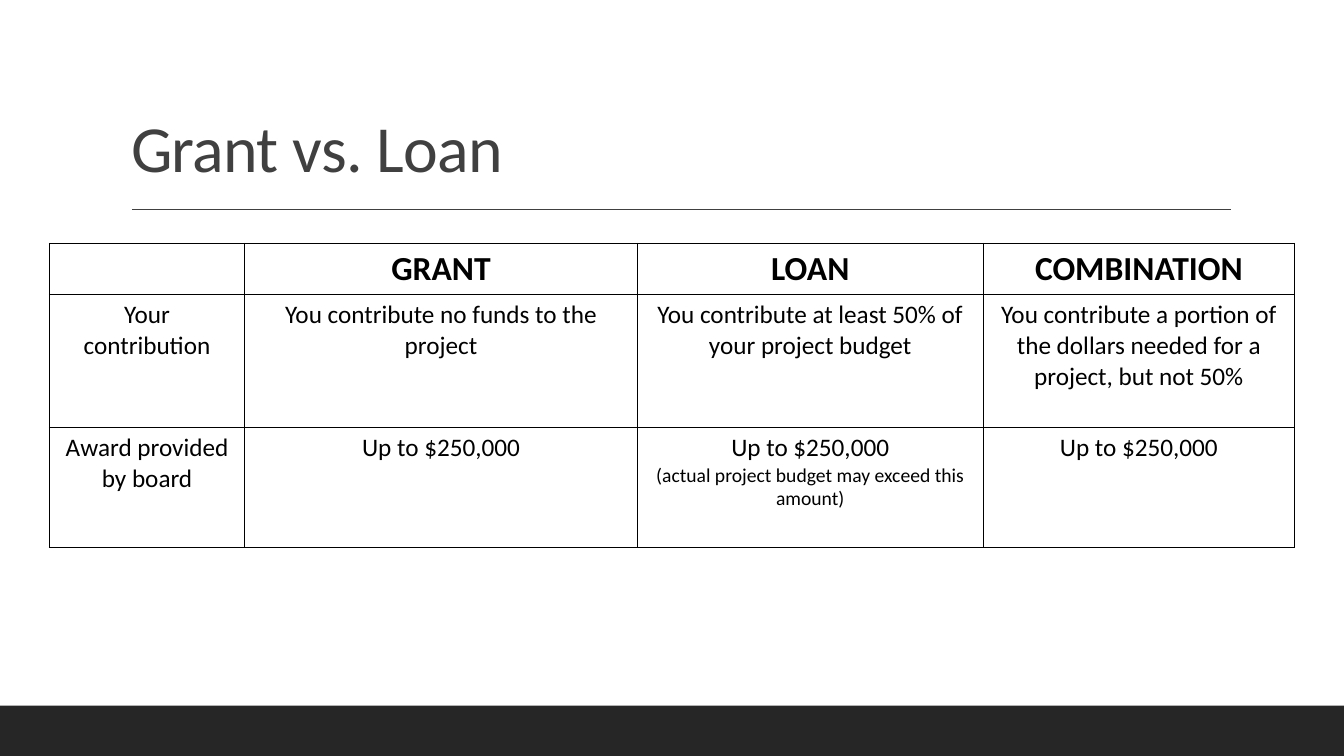
"""Build the Grant vs. Loan comparison slide."""
from lxml import etree
from pptx import Presentation
from pptx.dml import color
from pptx.enum import shapes, text
from pptx.oxml import ns
from pptx.util import Pt


def paint(form, shade):
    form.solid()
    form.fore_color.rgb = color.RGBColor.from_string(shade)


def write(para, words, size, shade, bold=False):
    run = para.add_run()
    run.text = words
    run.font.name = "Calibri"
    run.font.size = Pt(size)
    run.font.bold = bold
    paint(run.font.fill, shade)
    return run


deck = Presentation()
deck.slide_width, deck.slide_height = Pt(960), Pt(540)
slide = deck.slides.add_slide(deck.slide_layouts[5])

band = slide.shapes.add_shape(shapes.MSO_SHAPE.RECTANGLE, 0, Pt(504), Pt(960), Pt(36))
band.shadow.inherit = False
paint(band.fill, "262626")
band.line.fill.background()

rule = slide.shapes.add_connector(
    shapes.MSO_CONNECTOR.STRAIGHT, Pt(94.3), Pt(149.5), Pt(879), Pt(149.5))
paint(rule.line.fill, "404040")
rule.line.width = Pt(1)
etree.SubElement(rule._element.spPr, ns.qn("a:effectLst"))

title = slide.shapes.title
title.left, title.top, title.width, title.height = Pt(86.5), Pt(22.5), Pt(792), Pt(114.5)
frame = title.text_frame
frame.word_wrap = True
frame.auto_size = text.MSO_AUTO_SIZE.NONE
frame.vertical_anchor = text.MSO_ANCHOR.BOTTOM
head = frame.paragraphs[0]
head.alignment = text.PP_ALIGN.LEFT
head.line_spacing = 0.9
run = write(head, "Grant vs. Loan", 47, "404040")
run.font._element.set("spc", "-50")

award = "Up to $250,000"
rows = [
    ["", "GRANT", "LOAN", "COMBINATION"],
    ["Your contribution",
     "You contribute no funds to the project",
     "You contribute at least 50% of your project budget",
     "You contribute a portion of the dollars needed for a project, but not 50%"],
    ["Award provided by board", award, award, award],
]
wides = [139.5, 280.5, 247, 222.5]
highs = [36.5, 95, 85.5]
grid = slide.shapes.add_table(
    3, 4, Pt(35.3), Pt(174), Pt(sum(wides)), Pt(sum(highs))).table
for col, wide in zip(grid.columns, wides):
    col.width = Pt(wide)
for row, high in zip(grid.rows, highs):
    row.height = Pt(high)

for r, row in enumerate(rows):
    for c, words in enumerate(row):
        cell = grid.cell(r, c)
        props = cell._tc.get_or_add_tcPr()
        for side in ("lnL", "lnR", "lnT", "lnB"):
            edge = etree.SubElement(props, ns.qn("a:" + side), w=str(Pt(1)))
            fill = etree.SubElement(edge, ns.qn("a:solidFill"))
            etree.SubElement(fill, ns.qn("a:srgbClr"), val="000000")
        cell.fill.background()
        para = cell.text_frame.paragraphs[0]
        para.alignment = text.PP_ALIGN.CENTER
        if words:
            write(para, words, 18 if r else 24, "000000", r == 0)

note = grid.cell(2, 2).text_frame.add_paragraph()
note.alignment = text.PP_ALIGN.CENTER
write(note, "(actual project budget may exceed this amount)", 14, "000000")

deck.save("out.pptx")
